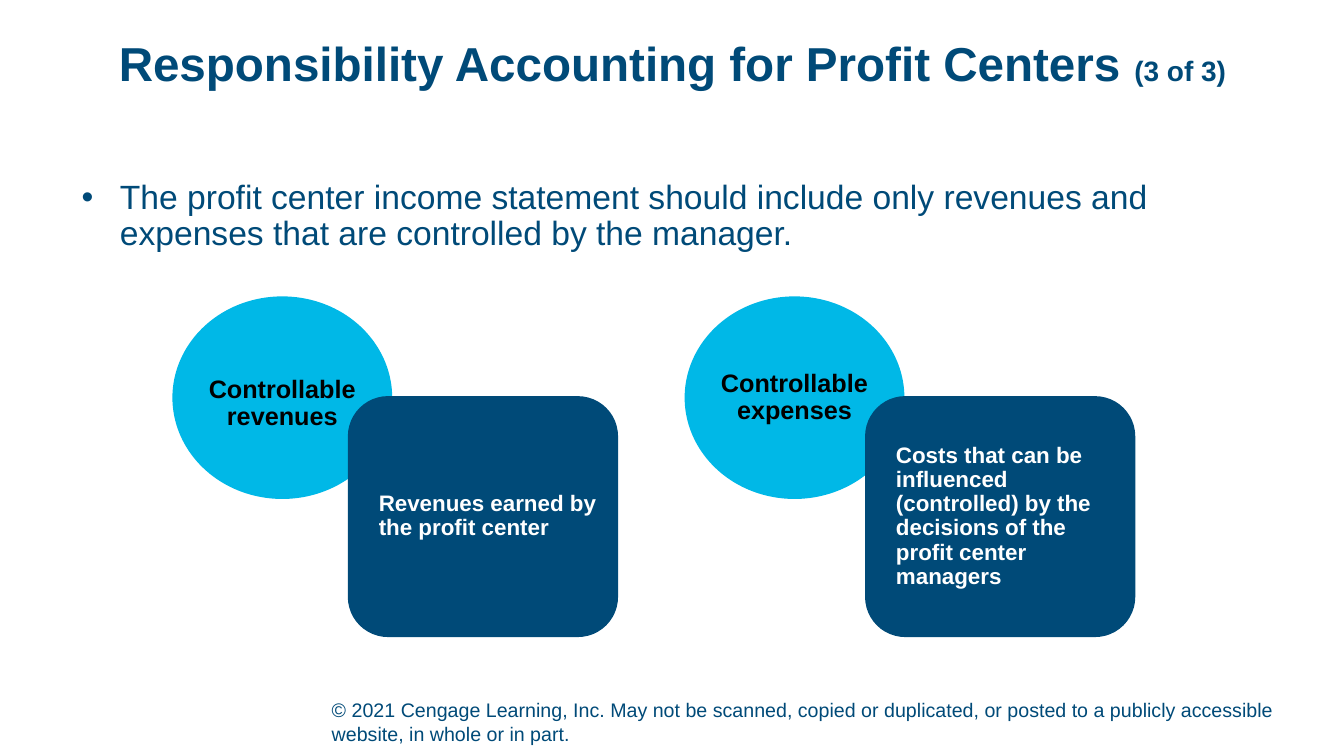
import dataclasses

import lxml.etree
import pptx
import pptx.dml.color
import pptx.enum.shapes
import pptx.enum.text
import pptx.oxml.ns
import pptx.util

Inches = pptx.util.Inches
SHAPE = pptx.enum.shapes.MSO_SHAPE
ALIGN = pptx.enum.text.PP_ALIGN
ANCHOR = pptx.enum.text.MSO_ANCHOR


@dataclasses.dataclass(frozen=True)
class Theme:
    """Colours, type sizes and font of the slide."""

    navy: str = "004A78"
    cyan: str = "00B8E7"
    black: str = "000000"
    white: str = "FFFFFF"
    font: str = "Arial"
    title: int = 34
    counter: int = 20
    body: int = 24
    circle: int = 18
    card: int = 16
    footer: int = 14


THEME = Theme()


def set_attrs(obj, values):
    """Set each named attribute of an object."""
    for name, value in values.items():
        setattr(obj, name, value)


def place(sp, box):
    """Move a shape to a box given in inches."""
    names = ("left", "top", "width", "height")
    set_attrs(sp, dict(zip(names, map(Inches, box))))


def write(sp, runs, color, bold=False, align=ALIGN.LEFT, anchor=ANCHOR.TOP,
          spacing=0.9, insets=(0, 0, 0, 0)):
    """Write one paragraph of (text, size) runs in a shape."""
    tf = sp.text_frame
    left, top, right, bottom = map(Inches, insets)
    set_attrs(tf, {
        "word_wrap": True,
        "auto_size": pptx.enum.text.MSO_AUTO_SIZE.NONE,
        "vertical_anchor": anchor,
        "margin_left": left,
        "margin_top": top,
        "margin_right": right,
        "margin_bottom": bottom,
    })
    p = tf.paragraphs[0]
    set_attrs(p, {"alignment": align, "line_spacing": spacing})
    for text, size in runs:
        r = p.add_run()
        r.text = text
        set_attrs(r.font, {"name": THEME.font, "size": pptx.util.Pt(size), "bold": bold})
        r.font.color.rgb = pptx.dml.color.RGBColor.from_string(color)
    return p


def add_bullet(p, indent):
    """Give a paragraph a round bullet with a hanging indent."""
    pPr = p._p.get_or_add_pPr()
    pPr.set("marL", str(Inches(indent)))
    pPr.set("indent", str(-Inches(indent)))
    for tag, name, value in (("a:buFont", "typeface", THEME.font), ("a:buChar", "char", "•")):
        bullet = lxml.etree.SubElement(pPr, pptx.oxml.ns.qn(tag))
        bullet.set(name, value)


def add_title(s, box):
    """Fill the title placeholder with the heading and its counter."""
    sp = s.shapes.title
    place(sp, box)
    runs = [("Responsibility Accounting for Profit Centers ", THEME.title),
            ("(3 of 3)", THEME.counter)]
    write(sp, runs, THEME.navy, bold=True, align=ALIGN.CENTER)


def add_body(s, box):
    """Add the bulleted statement."""
    sp = s.shapes.add_textbox(*map(Inches, box))
    text = ("The profit center income statement should include only revenues and "
            "expenses that are controlled by the manager.")
    add_bullet(write(sp, [(text, THEME.body)], THEME.navy), 0.38)


def add_footer(s, box):
    """Add the copyright line."""
    sp = s.shapes.add_textbox(*map(Inches, box))
    text = ("© 2021 Cengage Learning, Inc. May not be scanned, copied or duplicated, "
            "or posted to a publicly accessible website, in whole or in part.")
    write(sp, [(text, THEME.footer)], THEME.navy, anchor=ANCHOR.BOTTOM,
          spacing=1.0, insets=(0, 0, 0, 0.05))


def add_filled(s, kind, box, fill):
    """Add a flat shape without an outline."""
    sp = s.shapes.add_shape(kind, *map(Inches, box))
    sp.shadow.inherit = False
    sp.fill.solid()
    sp.fill.fore_color.rgb = pptx.dml.color.RGBColor.from_string(fill)
    sp.line.fill.background()
    return sp


def add_pair(s, box, term, meaning, term_drop):
    """Add a term circle at the top left and its card at the bottom right."""
    x, y, w, h = box
    circle_w, circle_h = 2.18, 2.01
    card_w, card_h = 2.68, 2.39
    circle = add_filled(s, SHAPE.OVAL, (x, y, circle_w, circle_h), THEME.cyan)
    write(circle, [(term, THEME.circle)], THEME.black, bold=True, align=ALIGN.CENTER,
          anchor=ANCHOR.MIDDLE, insets=(0, term_drop, 0, 0))
    card_box = (x + w - card_w, y + h - card_h, card_w, card_h)
    card = add_filled(s, SHAPE.ROUNDED_RECTANGLE, card_box, THEME.navy)
    write(card, [(meaning, THEME.card)], THEME.white, bold=True,
          anchor=ANCHOR.MIDDLE, insets=(0.19, 0, 0, 0))


def main():
    """Build and save the slide."""
    prs = pptx.Presentation()
    set_attrs(prs, {"slide_width": Inches(13.33), "slide_height": Inches(7.5)})
    s = prs.slides.add_slide(prs.slide_layouts[5])
    add_footer(s, (3.29, 6.92, 9.79, 0.52))
    add_title(s, (0.92, 0.4, 11.5, 0.73))
    add_body(s, (0.81, 1.79, 11.71, 1.15))
    pairs = (
        (1.71, 4.42, "Controllable revenues", "Revenues earned by the profit center", 0.13),
        (6.79, 4.47, "Controllable expenses",
         "Costs that can be influenced (controlled) by the decisions of the "
         "profit center managers", 0),
    )
    for left, width, term, meaning, term_drop in pairs:
        add_pair(s, (left, 2.94, width, 3.38), term, meaning, term_drop)
    prs.save("out.pptx")


if __name__ == "__main__":
    main()
